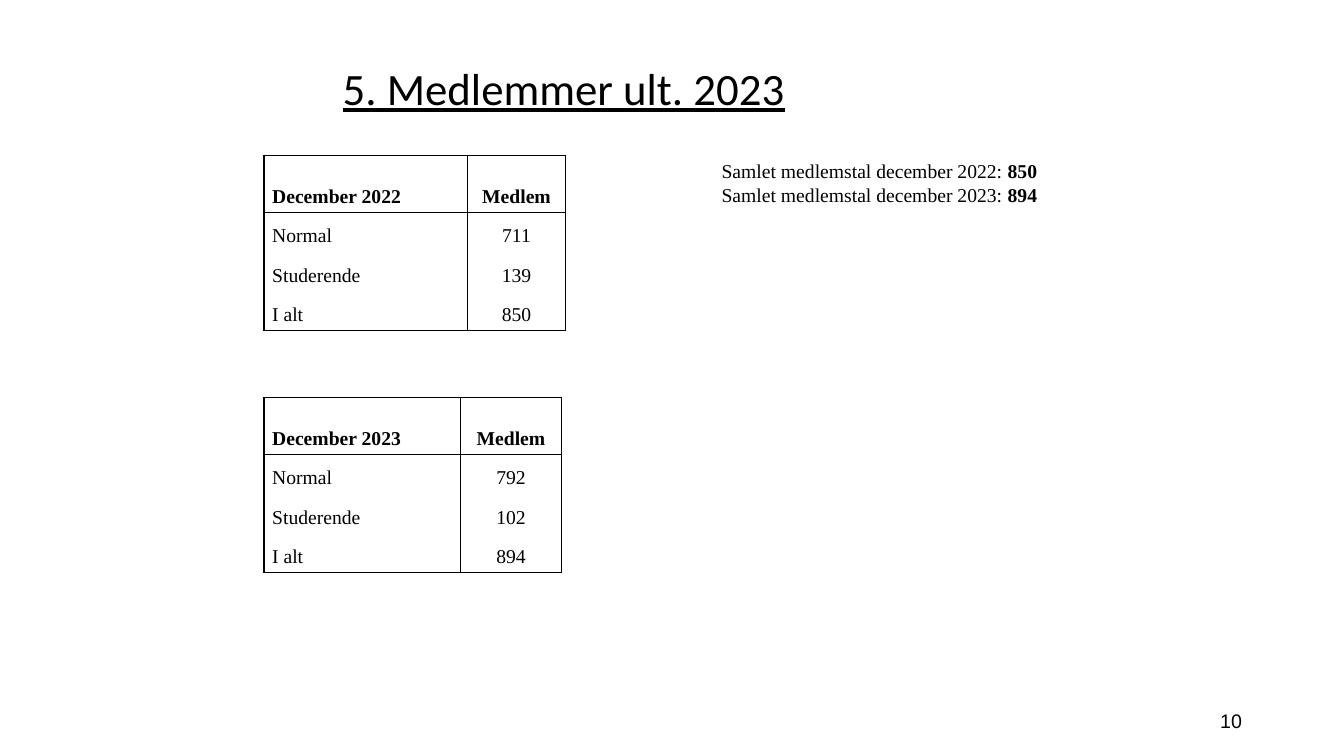
import dataclasses

import lxml.etree
import pptx
import pptx.dml.color
import pptx.enum.text
import pptx.oxml.ns
import pptx.util

COLUMNS, ROWS = 40, 24
BLACK = "000000"
SERIF = "Times New Roman"
ALIGN = pptx.enum.text.PP_ALIGN
ANCHOR = pptx.enum.text.MSO_ANCHOR

prs = pptx.Presentation()
prs.slide_width = pptx.util.Inches(13.33)
prs.slide_height = pptx.util.Inches(7.5)


@dataclasses.dataclass
class Box:
    """A place on the grid, in columns and rows."""
    left: float
    top: float
    width: float
    height: float

    def emu(self) -> tuple:
        return (across(self.left), down(self.top),
                across(self.width), down(self.height))


@dataclasses.dataclass
class MemberTable:
    month: str
    top: float
    widths: tuple
    normal: int
    students: int

    @property
    def total(self) -> int:
        return self.normal + self.students

    def rows(self) -> list:
        return [(self.month.capitalize(), "Medlem"), ("Normal", self.normal),
                ("Studerende", self.students), ("I alt", self.total)]


def across(columns: float) -> int:
    return round(prs.slide_width * columns / COLUMNS)


def down(rows: float) -> int:
    return round(prs.slide_height * rows / ROWS)


def color(value: str) -> pptx.dml.color.RGBColor:
    return pptx.dml.color.RGBColor.from_string(value)


def style(r, size: float, name: str, bold: bool = False, underline: bool = False) -> None:
    r.font.size = pptx.util.Pt(size)
    r.font.name = name
    r.font.bold = bold
    r.font.underline = underline
    r.font.color.rgb = color(BLACK)


def add_text_box(s, box: Box):
    tf = s.shapes.add_textbox(*box.emu()).text_frame
    tf.word_wrap = True
    return tf


def set_borders(cell, sides: str) -> None:
    """Draw the named sides (of L, R, T, B) and clear the others."""
    tc_pr = cell._tc.get_or_add_tcPr()
    qn = pptx.oxml.ns.qn
    for i, side in enumerate("LRTB"):
        ln = lxml.etree.Element(qn(f"a:ln{side}"), w=str(pptx.util.Pt(1)))
        tc_pr.insert(i, ln)
        if side in sides:
            fill = lxml.etree.SubElement(ln, qn("a:solidFill"))
            lxml.etree.SubElement(fill, qn("a:srgbClr"), val=BLACK)
        else:
            lxml.etree.SubElement(ln, qn("a:noFill"))


def add_member_table(s, members: MemberTable) -> None:
    rows = members.rows()
    heights = [1.82] + [1.25] * (len(rows) - 1)
    box = Box(7.86, members.top, sum(members.widths), sum(heights))
    table = s.shapes.add_table(len(rows), len(members.widths), *box.emu()).table
    table.first_row = table.horz_banding = False
    for column, width in zip(table.columns, members.widths):
        column.width = across(width)
    for i, (values, height) in enumerate(zip(rows, heights)):
        table.rows[i].height = down(height)
        # Header is boxed; the body has one frame per column
        sides = {0: "LRTB", 1: "LRT", len(rows) - 1: "LRB"}.get(i, "LR")
        for j, value in enumerate(values):
            cell = table.cell(i, j)
            cell.fill.background()
            set_borders(cell, sides)
            cell.vertical_anchor = ANCHOR.BOTTOM
            cell.margin_left = cell.margin_right = pptx.util.Inches(0.08)
            cell.margin_top = cell.margin_bottom = pptx.util.Inches(0.05)
            p = cell.text_frame.paragraphs[0]
            p.text = str(value)
            p.alignment = ALIGN.CENTER if j else ALIGN.LEFT
            style(p.runs[0], 14, SERIF, bold=i == 0)


def add_title(s, text: str, box: Box) -> None:
    sp = s.shapes.title
    sp.left, sp.top, sp.width, sp.height = box.emu()
    tf = sp.text_frame
    tf.text = text
    tf.vertical_anchor = ANCHOR.MIDDLE
    p = tf.paragraphs[0]
    p.alignment = ALIGN.LEFT
    p.line_spacing = 0.9
    style(p.runs[0], 32, "Calibri", underline=True)


def add_page_number(s, number: int, box: Box) -> None:
    tf = add_text_box(s, box)
    tf.text = str(number)
    tf.vertical_anchor = ANCHOR.MIDDLE
    p = tf.paragraphs[0]
    p.alignment = ALIGN.RIGHT
    style(p.runs[0], 14, "Arial")


def add_totals(s, tables: list, box: Box) -> None:
    tf = add_text_box(s, box)
    for i, members in enumerate(tables):
        p = tf.add_paragraph() if i else tf.paragraphs[0]
        p.text = f"Samlet medlemstal {members.month}: "
        style(p.runs[0], 14, SERIF)
        r = p.add_run()
        r.text = str(members.total)
        style(r, 14, SERIF, bold=True)


def main() -> None:
    tables = [
        MemberTable("december 2022", 4.93, (6.06, 2.91), 711, 139),
        MemberTable("december 2023", 12.61, (5.85, 3), 792, 102),
    ]
    s = prs.slides.add_slide(prs.slide_layouts[5])
    # Title and page number
    add_title(s, "5. Medlemmer ult. 2023", Box(9.9, 0.9, 20.25, 4))
    add_page_number(s, 10, Box(28.26, 22.24, 9, 1.28))
    # Members by year, then the totals
    for members in tables:
        add_member_table(s, members)
    add_totals(s, tables, Box(21.18, 4.9, 12.5, 2.59))
    prs.save("out.pptx")


if __name__ == "__main__":
    main()
